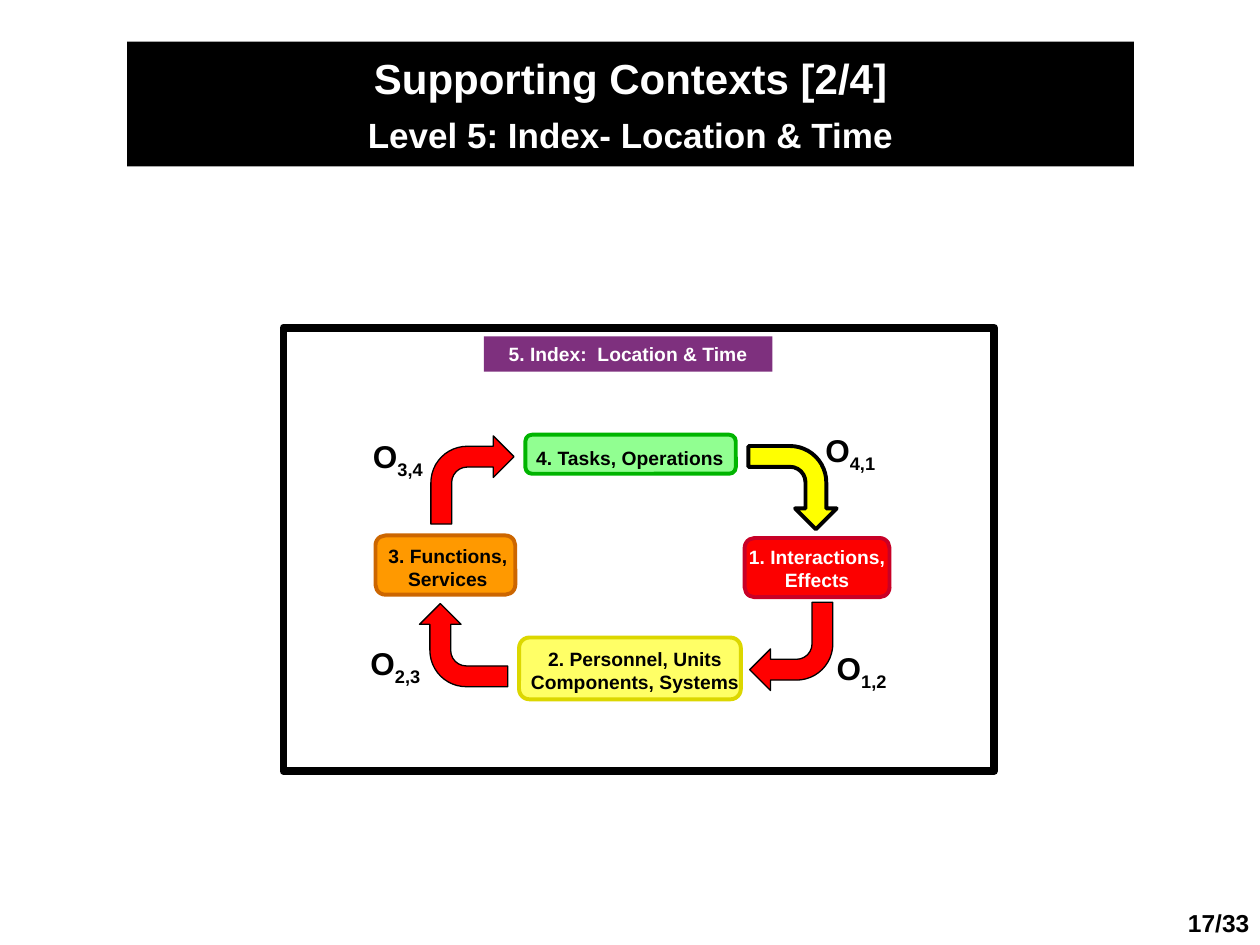
from pptx import Presentation
from pptx.dml.color import RGBColor
from pptx.enum.shapes import MSO_SHAPE as Shape
from pptx.enum.text import MSO_ANCHOR as Anchor, MSO_AUTO_SIZE as AutoSize, PP_ALIGN as Align
from pptx.util import Inches, Pt

BLACK = RGBColor(0x00, 0x00, 0x00)
WHITE = RGBColor(0xFF, 0xFF, 0xFF)
PURPLE = RGBColor(0x7E, 0x30, 0x7E)
RED = RGBColor(0xFF, 0x00, 0x00)
YELLOW = RGBColor(0xFF, 0xFF, 0x00)
GREEN, GREEN_EDGE = RGBColor(0x91, 0xFF, 0x91), RGBColor(0x00, 0xB4, 0x00)
CRIMSON, CRIMSON_EDGE = RGBColor(0xFC, 0x00, 0x00), RGBColor(0xC8, 0x00, 0x26)
LEMON, LEMON_EDGE = RGBColor(0xFF, 0xFF, 0x66), RGBColor(0xDC, 0xD7, 0x00)
ORANGE, ORANGE_EDGE = RGBColor(0xFF, 0x99, 0x00), RGBColor(0xCC, 0x66, 0x00)


def inches(box):
    return [Inches(value) for value in box]


def add_span(para, text, size=11, color=BLACK, subscript=False):
    """Add bold Arial text to a paragraph."""
    span = para.add_run()
    span.text = text
    span.font.name = "Arial"
    span.font.size = Pt(size)
    span.font.bold = True
    span.font.color.rgb = color
    if subscript:
        span._r.get_or_add_rPr().set("baseline", "-25000")


def fill_lines(frame, lines, align=Align.CENTER, **style):
    """Write one paragraph per line of text."""
    for index, line in enumerate(lines):
        para = frame.add_paragraph() if index else frame.paragraphs[0]
        para.alignment = align
        add_span(para, line, **style)


def add_text_box(page, box, wrap=True, inset=0.09):
    frame = page.shapes.add_textbox(*inches(box)).text_frame
    frame.word_wrap = wrap
    frame.margin_left = frame.margin_right = Inches(inset)
    return frame


def add_block(page, kind, box, fill, edge=None, width=2.25):
    block = page.shapes.add_shape(kind, *inches(box))
    block.shadow.inherit = False
    block.fill.solid()
    block.fill.fore_color.rgb = fill
    if edge is None:
        block.line.fill.background()
    else:
        block.line.color.rgb = edge
        block.line.width = Pt(width)
    return block


def add_title(page, box):
    title = page.shapes.title
    title.left, title.top, title.width, title.height = inches(box)
    title.fill.solid()
    title.fill.fore_color.rgb = BLACK
    frame = title.text_frame
    frame.auto_size = AutoSize.NONE
    frame.vertical_anchor = Anchor.MIDDLE
    fill_lines(frame, ["Supporting Contexts [2/4]"], size=24, color=WHITE)
    subtitle = frame.add_paragraph()
    subtitle.alignment = Align.CENTER
    subtitle.space_before = Pt(6)
    add_span(subtitle, "Level 5: Index- Location & Time", size=20, color=WHITE)


def add_index_frame(page, box):
    left, top, _, _ = box
    add_block(page, Shape.RECTANGLE, box, WHITE, BLACK, 4.5)
    label = add_block(page, Shape.RECTANGLE, (left + 1.59, top + 0.07, 2.29, 0.28), PURPLE)
    label.text_frame.vertical_anchor = Anchor.MIDDLE
    fill_lines(label.text_frame, ["5. Index:  Location & Time"], color=WHITE)


def add_node(page, box, text_box, lines, fill, edge, kind=Shape.ROUNDED_RECTANGLE, color=BLACK):
    add_block(page, kind, box, fill, edge)
    fill_lines(add_text_box(page, text_box, wrap=len(lines) > 1), lines, color=color)


def add_turn(page, arrow_at, label_at, indices, rotation, fill=RED, width=0.75):
    """Add a bent arrow and the name of its operator."""
    arrow = add_block(page, Shape.BENT_ARROW, (*arrow_at, 0.66, 0.7), fill, BLACK, width)
    arrow.rotation = rotation
    para = add_text_box(page, (*label_at, 0.75, 0.4)).paragraphs[0]
    add_span(para, "O", size=18)
    add_span(para, indices, size=18, subscript=True)


def add_cycle(page, box):
    left, top, _, _ = box

    def at(x, y, *size):
        return (left + x, top + y, *size)

    # Stages
    add_node(page, at(1.32, 0.08, 1.67, 0.31), at(1.27, 0.12, 1.76, 0.28),
             ["4. Tasks, Operations"], GREEN, GREEN_EDGE, kind=Shape.FLOWCHART_ALTERNATE_PROCESS)
    add_node(page, at(3.06, 0.9, 1.15, 0.47), at(2.94, 0.91, 1.39, 0.46),
             ["1. Interactions,", "Effects"], CRIMSON, CRIMSON_EDGE, color=WHITE)
    add_node(page, at(1.27, 1.69, 1.76, 0.49), at(1.23, 1.72, 1.92, 0.46),
             ["2. Personnel, Units", "Components, Systems"], LEMON, LEMON_EDGE)
    add_node(page, at(0.13, 0.88, 1.11, 0.47), at(0.11, 0.9, 1.19, 0.47),
             ["3. Functions,", "Services"], ORANGE, ORANGE_EDGE)

    # Operators between the stages
    add_turn(page, at(0.57, 0.09), at(0.02, 0.05), "3,4", 0)
    add_turn(page, at(0.5, 1.4), at(0, 1.69), "2,3", 270)
    add_turn(page, at(3.1, 1.41), at(3.7, 1.73), "1,2", 180)
    add_turn(page, at(3.11, 0.15), at(3.61, 0), "4,1", 90, YELLOW, 2.25)


def add_page_number(page, box):
    frame = add_text_box(page, box, wrap=False, inset=0.1)
    fill_lines(frame, ["17/33"], align=Align.LEFT, size=14)


def main():
    deck = Presentation()
    deck.slide_width, deck.slide_height = Inches(10), Inches(7.5)
    page = deck.slides.add_slide(deck.slide_layouts[5])
    add_page_number(page, (9.33, 7.16, 0.71, 0.34))
    add_index_frame(page, (2.25, 2.6, 5.64, 3.52))
    add_title(page, (1.01, 0.33, 7.99, 0.99))
    add_cycle(page, (2.85, 3.37, 4.45, 2.18))
    deck.save("out.pptx")


if __name__ == "__main__":
    main()
